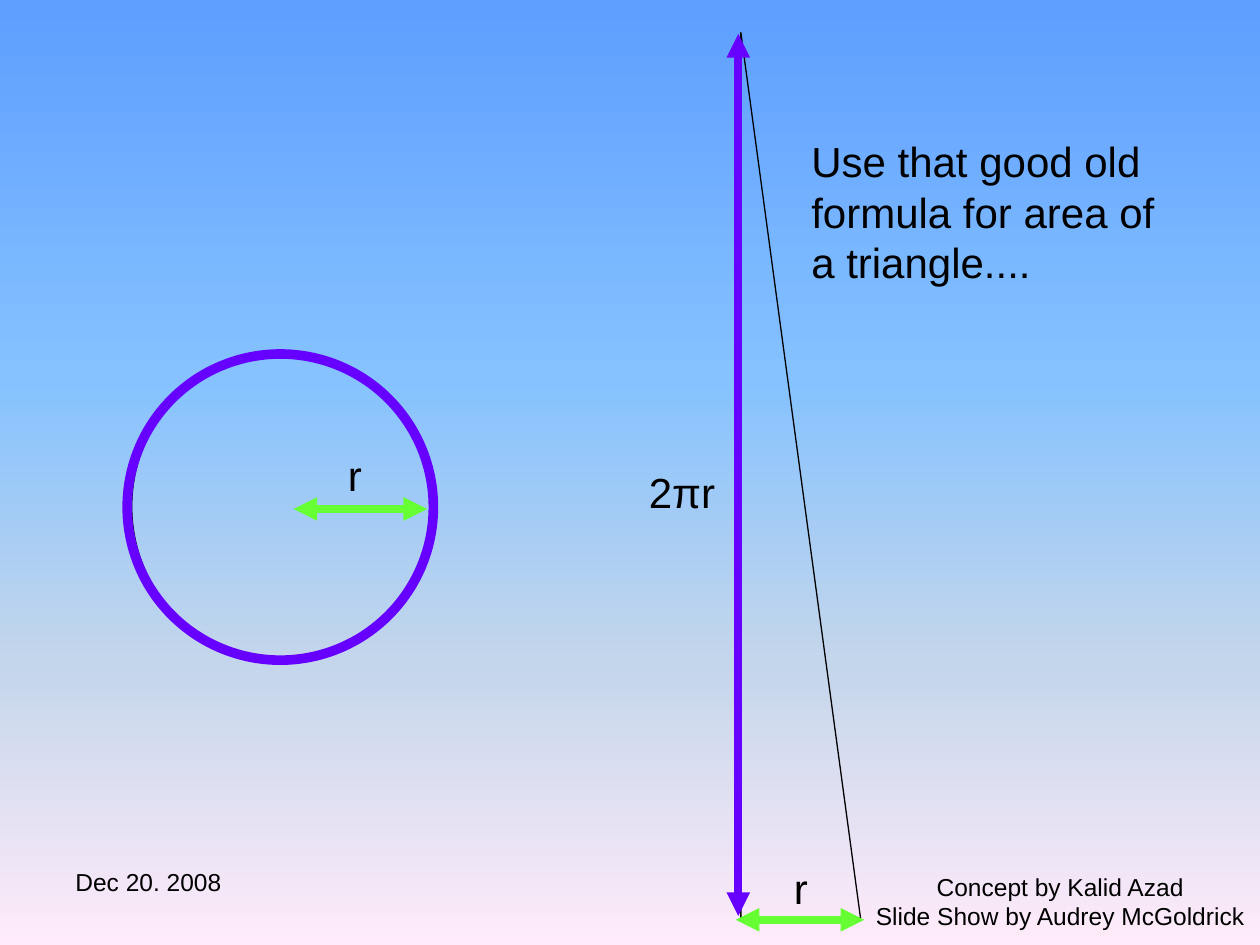
from lxml.etree import SubElement as Sub
from pptx import Presentation
from pptx.dml.color import RGBColor as Rgb
from pptx.enum.shapes import MSO_CONNECTOR as Link, MSO_SHAPE as Kind
from pptx.enum.text import MSO_ANCHOR as Anchor, PP_ALIGN as Align
from pptx.oxml.ns import qn
from pptx.util import Inches, Pt

theme = {
    "font": "Arial",
    "ink": "000000",
    "edge": "6600FF",
    "ray": "66FF33",
    "sky": [(0, "5E9EFF"), (40, "85C2FF"), (70, "C4D6EB"), (100, "FFEBFA")],
    "note": 14,
    "body": 24,
}


def style(obj, values):
    for key, val in values.items():
        setattr(obj, key, val)


def stroke(line, tint, width):
    line.color.rgb = Rgb.from_string(theme[tint])
    line.width = Pt(width)


deck = Presentation()
style(deck, {"slide_width": Inches(10), "slide_height": Inches(7.5)})
slide = deck.slides.add_slide(deck.slide_layouts[6])

fill = slide.background.fill
fill.gradient()
fill.gradient_angle = 270
stops = slide.element.xpath(".//a:gsLst")[0]
for stop in list(stops):
    stops.remove(stop)
for pos, tint in theme["sky"]:
    stop = Sub(stops, qn("a:gs"), pos=str(pos * 1000))
    Sub(stop, qn("a:srgbClr"), val=tint)

outlines = [
    (Kind.RIGHT_TRIANGLE, (5.88, 0.26, 0.95, 7.03), "ink", 0.75),
    (Kind.OVAL, (1.04, 2.79, 2.38, 2.46), "ink", 1.5),
    (Kind.OVAL, (1.01, 2.81, 2.43, 2.43), "edge", 5.5),
]
for kind, box, tint, width in outlines:
    shape = slide.shapes.add_shape(kind, *map(Inches, box))
    shape.shadow.inherit = False
    shape.fill.background()
    stroke(shape.line, tint, width)

labels = [
    ("Dec 20. 2008", (0.5, 6.83, 1.5, 0.52), "note", 0.1, Align.LEFT),
    ("Concept by Kalid Azad\nSlide Show by Audrey McGoldrick",
     (6.83, 6.87, 3.17, 0.52), "note", 0.1, Align.CENTER),
    ("r", (2.57, 3.52, 1.22, 0.5), "body", 0.19, Align.LEFT),
    ("r", (6.11, 6.8, 1.22, 0.5), "body", 0.19, Align.LEFT),
    ("Use that good old formula for area of a triangle....",
     (6.34, 1.03, 3.19, 1.3), "body", 0.1, Align.LEFT),
    ("2πr", (4.96, 3.65, 1.22, 0.5), "body", 0.19, Align.LEFT),
]
for text, box, size, inset, align in labels:
    frame = slide.shapes.add_textbox(*map(Inches, box)).text_frame
    style(frame, {"text": text, "word_wrap": True,
                  "margin_left": Inches(inset),
                  "vertical_anchor": Anchor.TOP})
    for para in frame.paragraphs:
        para.alignment = align
        font = para.runs[0].font
        style(font, {"name": theme["font"], "size": Pt(theme[size])})
        font.color.rgb = Rgb.from_string(theme["ink"])

arrows = [
    ((5.86, 0.27, 5.86, 7.27), "edge"),
    ((2.33, 4.04, 3.39, 4.04), "ray"),
    ((5.84, 7.3, 6.86, 7.3), "ray"),
]
for ends, tint in arrows:
    arrow = slide.shapes.add_connector(Link.STRAIGHT, *map(Inches, ends))
    stroke(arrow.line, tint, 4.5)
    props = arrow.element.spPr
    for tip in ("a:headEnd", "a:tailEnd"):
        Sub(props.find(qn("a:ln")), qn(tip), type="triangle")
    Sub(props, qn("a:effectLst"))

deck.save("out.pptx")
